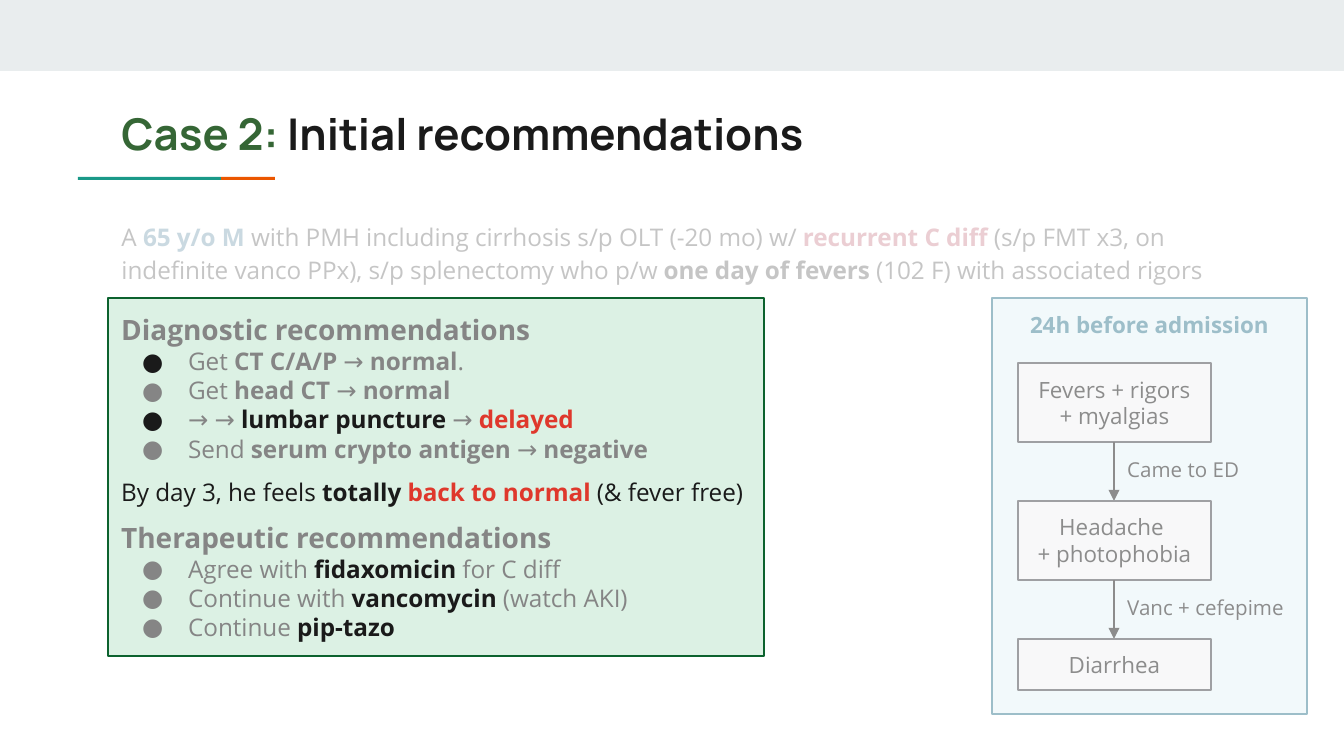
from typing import NamedTuple

from lxml import etree
from pptx import Presentation
from pptx import util as u
from pptx.dml.color import RGBColor
from pptx.enum import shapes, text
from pptx.oxml import ns

SCALE = 914400 / 134.4
SANS, DISPLAY = "Open Sans", "Manrope"

WHITE = RGBColor(0xFF, 0xFF, 0xFF)
INK = RGBColor(0x1A, 0x1A, 0x1A)
GREY = RGBColor(0x85, 0x85, 0x85)
RED = RGBColor(0xDF, 0x38, 0x2C)
GREEN = RGBColor(0x35, 0x66, 0x35)
TEAL = RGBColor(0x1A, 0x99, 0x88)
ORANGE = RGBColor(0xEB, 0x56, 0x00)
STEEL = RGBColor(0x2D, 0x69, 0x87)
ROSE = RGBColor(0xB0, 0x3D, 0x50)
BAND = RGBColor(0xE9, 0xED, 0xEE)
PALE_BLUE = RGBColor(0xE5, 0xF4, 0xF8)
BLUE = RGBColor(0x3B, 0x7E, 0x94)
PALE_GREEN = RGBColor(0xDC, 0xF1, 0xE4)
DARK_GREEN = RGBColor(0x0C, 0x62, 0x2E)
PALE_GREY = RGBColor(0xF1, 0xF2, 0xF3)
SLATE = RGBColor(0x40, 0x42, 0x47)


class Area(NamedTuple):
    left: int
    top: int
    width: int
    height: int


class Span(NamedTuple):
    words: str
    color: RGBColor = INK
    bold: bool = False


class Para(NamedTuple):
    spans: list[Span]
    size: float = 13
    bullet: RGBColor | None = None
    before: float = 0


class Step(NamedTuple):
    lines: list[str]
    height: int
    next_label: str = ""


def px(length: int) -> int:
    return round(length * SCALE)


def emu(area: Area) -> list[int]:
    return [px(length) for length in area]


def add_bullet(para, color: RGBColor | None) -> None:
    props = para._p.get_or_add_pPr()
    props.set("marL", str(px(67) if color else 0))
    props.set("indent", str(px(-46) if color else 0))
    if color is None:
        etree.SubElement(props, ns.qn("a:buNone"))
        return
    tint = etree.SubElement(props, ns.qn("a:buClr"))
    etree.SubElement(tint, ns.qn("a:srgbClr"), val=str(color))
    etree.SubElement(props, ns.qn("a:buFont"), typeface=SANS)
    etree.SubElement(props, ns.qn("a:buChar"), char="●")


def write(box, paras: list[Para], *, font: str = SANS,
          align=text.PP_ALIGN.LEFT, anchor=text.MSO_ANCHOR.TOP,
          spacing: float = 1.0) -> None:
    frame = box.text_frame
    frame.word_wrap = True
    frame.auto_size = text.MSO_AUTO_SIZE.NONE
    frame.vertical_anchor = anchor
    frame.margin_left = frame.margin_right = u.Inches(0.1)
    frame.margin_top = frame.margin_bottom = u.Inches(0.1)
    for index, item in enumerate(paras):
        para = frame.add_paragraph() if index else frame.paragraphs[0]
        add_bullet(para, item.bullet)
        para.alignment = align
        para.line_spacing = spacing
        para.space_before = u.Pt(item.before)
        para.space_after = u.Pt(0)
        for span in item.spans:
            run = para.add_run()
            run.text = span.words
            run.font.name = font
            run.font.size = u.Pt(item.size)
            run.font.bold = span.bold
            run.font.color.rgb = span.color


def add_box(page, area: Area, fill: RGBColor, line: RGBColor | None = None,
            opacity: int = 100):
    box = page.shapes.add_shape(shapes.MSO_SHAPE.RECTANGLE, *emu(area))
    box.shadow.inherit = False
    box.fill.solid()
    box.fill.fore_color.rgb = fill
    if opacity < 100:
        tint = box.fill._xPr.find(".//" + ns.qn("a:srgbClr"))
        etree.SubElement(tint, ns.qn("a:alpha"), val=str(opacity * 1000))
    if line is None:
        box.line.fill.background()
    else:
        box.line.color.rgb = line
        box.line.width = u.Pt(0.75)
    return box


def add_arrow(page, x: int, top: int, bottom: int) -> None:
    arrow = page.shapes.add_connector(
        shapes.MSO_CONNECTOR.STRAIGHT, px(x), px(top), px(x), px(bottom))
    arrow.line.color.rgb = INK
    arrow.line.width = u.Pt(0.75)
    etree.SubElement(arrow.line._get_or_add_ln(), ns.qn("a:tailEnd"), type="triangle")
    etree.SubElement(arrow._element.spPr, ns.qn("a:effectLst"))


def place(box, area: Area) -> None:
    box.left, box.top, box.width, box.height = emu(area)


def add_timeline(page, steps: list[Step]) -> None:
    center = text.PP_ALIGN.CENTER
    panel = add_box(page, Area(992, 298, 315, 416), PALE_BLUE, BLUE)
    write(panel, [Para([Span("24h before admission", BLUE, True)], 12)], align=center)
    left, width, pitch = 1018, 193, 138
    middle = left + width // 2
    for index, step in enumerate(steps):
        top = 363 + index * pitch
        box = add_box(page, Area(left, top, width, step.height), PALE_GREY, SLATE)
        write(box, [Para([Span(line)], 12) for line in step.lines],
              align=center, anchor=text.MSO_ANCHOR.MIDDLE)
        if step.next_label:
            bottom = top + step.height
            add_arrow(page, middle, bottom, top + pitch)
            label = page.shapes.add_textbox(*emu(Area(middle, bottom + 2, 192, 52)))
            write(label, [Para([Span(step.next_label)], 11)])
    add_box(page, Area(985, 291, 335, 442), WHITE, opacity=50)


TITLE = [Para([Span("Case 2:", GREEN, True),
               Span(" Initial recommendations", INK, True)], 23.4)]
INTRO = [Para([
    Span("A "), Span("65 y/o M", STEEL, True),
    Span(" with PMH including cirrhosis s/p OLT (-20 mo) w/ "),
    Span("recurrent C diff", ROSE, True),
    Span(" (s/p FMT x3, on indefinite vanco PPx), s/p splenectomy who p/w "),
    Span("one day of fevers", INK, True),
    Span(" (102 F) with associated rigors"),
])]
ARROW = Span(" → ", GREY)
NORMAL = Span("normal", GREY, True)
ADVICE = [
    Para([Span("Diagnostic recommendations", GREY, True)], 15),
    Para([Span("Get ", GREY), Span("CT C/A/P", GREY, True), ARROW, NORMAL,
          Span(".", GREY)], bullet=INK),
    Para([Span("Get ", GREY), Span("head CT", GREY, True), ARROW, NORMAL], bullet=GREY),
    Para([Span("→ → ", GREY), Span("lumbar puncture ", INK, True), Span("→ ", GREY),
          Span("delayed", RED, True)], bullet=INK),
    Para([Span("Send ", GREY), Span("serum crypto antigen ", GREY, True),
          Span("→ ", GREY), Span("negative", GREY, True)], bullet=GREY),
    Para([Span("By day 3, he feels "), Span("totally ", INK, True),
          Span("back to normal", RED, True), Span(" (& fever free)")], before=7.5),
    Para([Span("Therapeutic recommendations", GREY, True)], 15, before=7.5),
    Para([Span("Agree with ", GREY), Span("fidaxomicin", INK, True),
          Span(" for C diff", GREY)], bullet=GREY),
    Para([Span("Continue with ", GREY), Span("vancomycin", INK, True),
          Span(" (watch AKI)", GREY)], bullet=GREY),
    Para([Span("Continue ", GREY), Span("pip-tazo", INK, True)], bullet=GREY),
]
STEPS = [
    Step(["Fevers + rigors + myalgias"], 79, "Came to ED"),
    Step(["Headache ", "+ photophobia"], 79, "Vanc + cefepime"),
    Step(["Diarrhea"], 51),
]


def main() -> None:
    deck = Presentation()
    deck.slide_width, deck.slide_height = px(1344), px(756)
    page = deck.slides.add_slide(deck.slide_layouts[1])
    title, body = page.placeholders

    add_box(page, Area(0, 0, 1344, 71), BAND)
    add_box(page, Area(78, 177, 143, 3), TEAL)
    add_box(page, Area(221, 177, 54, 3), ORANGE)

    place(title, Area(108, 93, 1130, 79))
    write(title, TITLE, font=DISPLAY)
    place(body, Area(108, 204, 1130, 94))
    write(body, INTRO, spacing=1.15)
    for _ in range(2):
        add_box(page, Area(108, 196, 1142, 94), WHITE, opacity=50)

    advice = add_box(page, Area(108, 298, 656, 358), PALE_GREEN, DARK_GREEN)
    write(advice, ADVICE, anchor=text.MSO_ANCHOR.MIDDLE)
    add_timeline(page, STEPS)
    deck.save("out.pptx")


if __name__ == "__main__":
    main()
